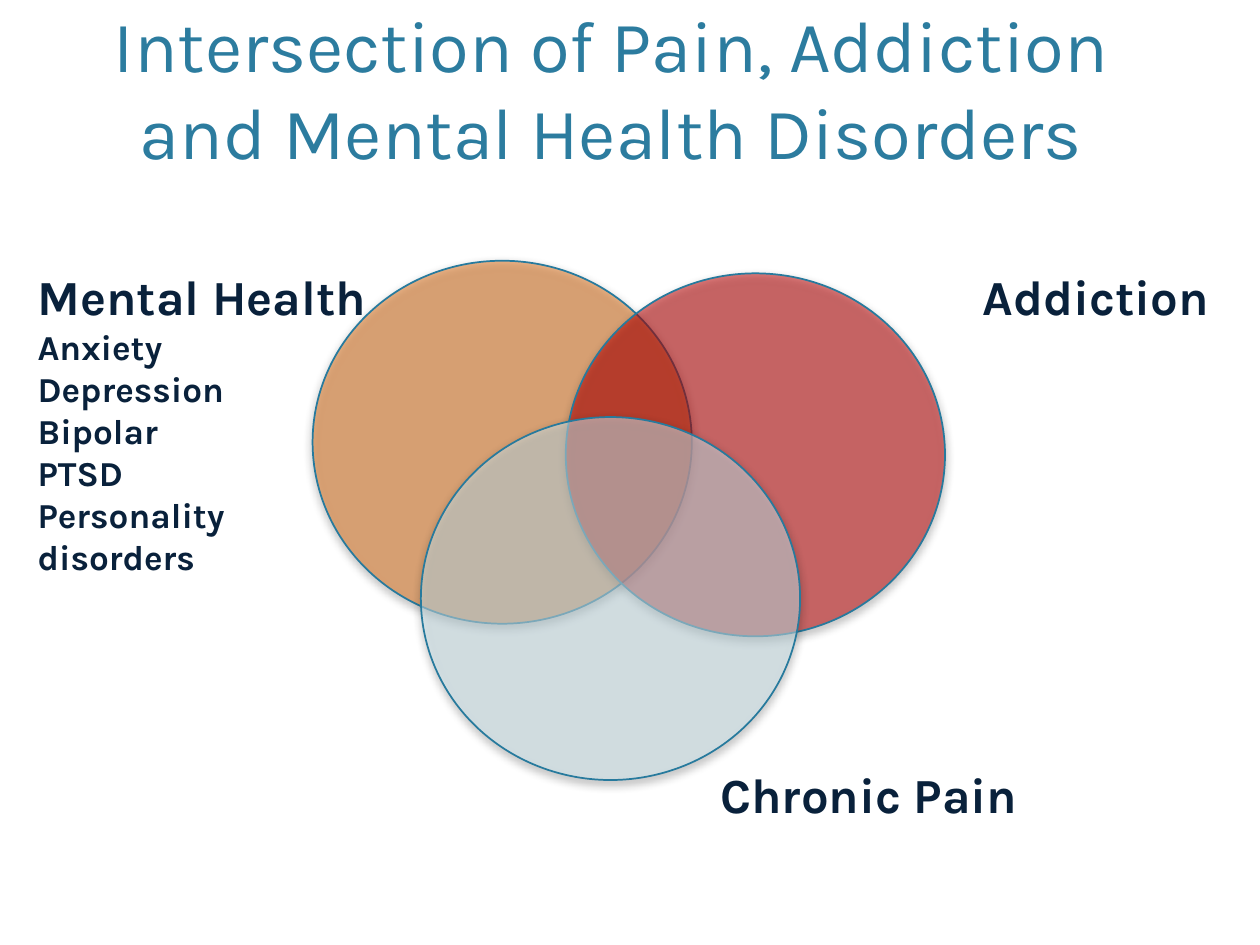
from dataclasses import dataclass

from lxml import etree
from pptx import Presentation
from pptx.dml.color import RGBColor
from pptx.enum.shapes import MSO_SHAPE
from pptx.enum.text import MSO_ANCHOR, MSO_AUTO_SIZE, PP_ALIGN
from pptx.oxml.ns import qn
from pptx.util import Pt

OVAL = MSO_SHAPE.OVAL
BOTTOM = MSO_ANCHOR.BOTTOM
CENTER = PP_ALIGN.CENTER
NO_FIT = MSO_AUTO_SIZE.NONE

FONT = "Karla"
COLORS = {
    "title": "2C7C9F",
    "text": "09213B",
    "edge": "277A9D",
    "mental": "E2751D",
    "habit": "C00000",
    "pain": "D5EDF4",
    "shade": "000000",
}
WIDE, HIGH = 216.7, 207.4  # size of every circle


@dataclass
class Circle:
    left: float
    top: float
    color: str


@dataclass
class Label:
    left: float
    top: float
    width: float
    height: float
    head: str
    items: tuple = ()


CIRCLES = [
    Circle(178.6, 149, "mental"),
    Circle(323.3, 156.2, "habit"),
    Circle(240.5, 238.3, "pain"),
]
LABELS = [
    Label(554.4, 149, 162, 41, "Addiction"),
    Label(14.4, 149, 214.6, 185, "Mental Health",
          ("Anxiety", "Depression", "Bipolar", "PTSD", "Personality disorders")),
    Label(404.6, 433.4, 200.9, 41, "Chronic Pain"),
]


def style(para, size: float, color: str, bold: bool = False) -> None:
    for run in para.runs:
        run.font.name = FONT
        run.font.size = Pt(size)
        run.font.bold = bold
        run.font.color.rgb = RGBColor.from_string(COLORS[color])


def add_alpha(color, share: int) -> None:
    etree.SubElement(color, qn("a:alpha"), val=str(share * 1000))


def add_shadow(shape) -> None:
    shape.shadow.inherit = False
    effects = shape._element.spPr.find(qn("a:effectLst"))
    outer = etree.SubElement(effects, qn("a:outerShdw"), blurRad=str(Pt(5)),
                             dist=str(Pt(2)), dir="5400000", rotWithShape="0")
    color = etree.SubElement(outer, qn("a:srgbClr"), val=COLORS["shade"])
    add_alpha(color, 40)


def add_circle(slide, item: Circle) -> None:
    shape = slide.shapes.add_shape(OVAL, Pt(item.left), Pt(item.top), Pt(WIDE), Pt(HIGH))
    shape.fill.solid()
    shape.fill.fore_color.rgb = RGBColor.from_string(COLORS[item.color])
    add_alpha(shape._element.spPr.find(qn("a:solidFill"))[0], 51)
    shape.line.color.rgb = RGBColor.from_string(COLORS["edge"])
    shape.line.width = Pt(1)
    add_shadow(shape)


def add_label(slide, item: Label) -> None:
    box = slide.shapes.add_textbox(Pt(item.left), Pt(item.top), Pt(item.width), Pt(item.height))
    frame = box.text_frame
    frame.word_wrap = True
    frame.text = item.head
    style(frame.paragraphs[0], 28, "text", True)
    if item.items:
        para = frame.add_paragraph()
        para.text = "\n".join(item.items)
        style(para, 20, "text", True)


def add_title(slide, text: str) -> None:
    title = slide.shapes.title
    title.left, title.top, title.width, title.height = Pt(25.2), Pt(7.2), Pt(648), Pt(95.8)
    frame = title.text_frame
    frame.text = text
    frame.word_wrap = True
    frame.auto_size = NO_FIT
    frame.vertical_anchor = BOTTOM
    para = frame.paragraphs[0]
    para.alignment = CENTER
    style(para, 41.4, "title")


def main() -> None:
    deck = Presentation()
    deck.slide_width, deck.slide_height = Pt(720), Pt(540)
    slide = deck.slides.add_slide(deck.slide_layouts[5])

    # Title
    add_title(slide, "Intersection of Pain, Addiction and Mental Health Disorders")

    # Overlapping circles, back to front
    for item in CIRCLES:
        add_circle(slide, item)

    # Labels around the circles
    for item in LABELS:
        add_label(slide, item)

    deck.save("out.pptx")


if __name__ == "__main__":
    main()
